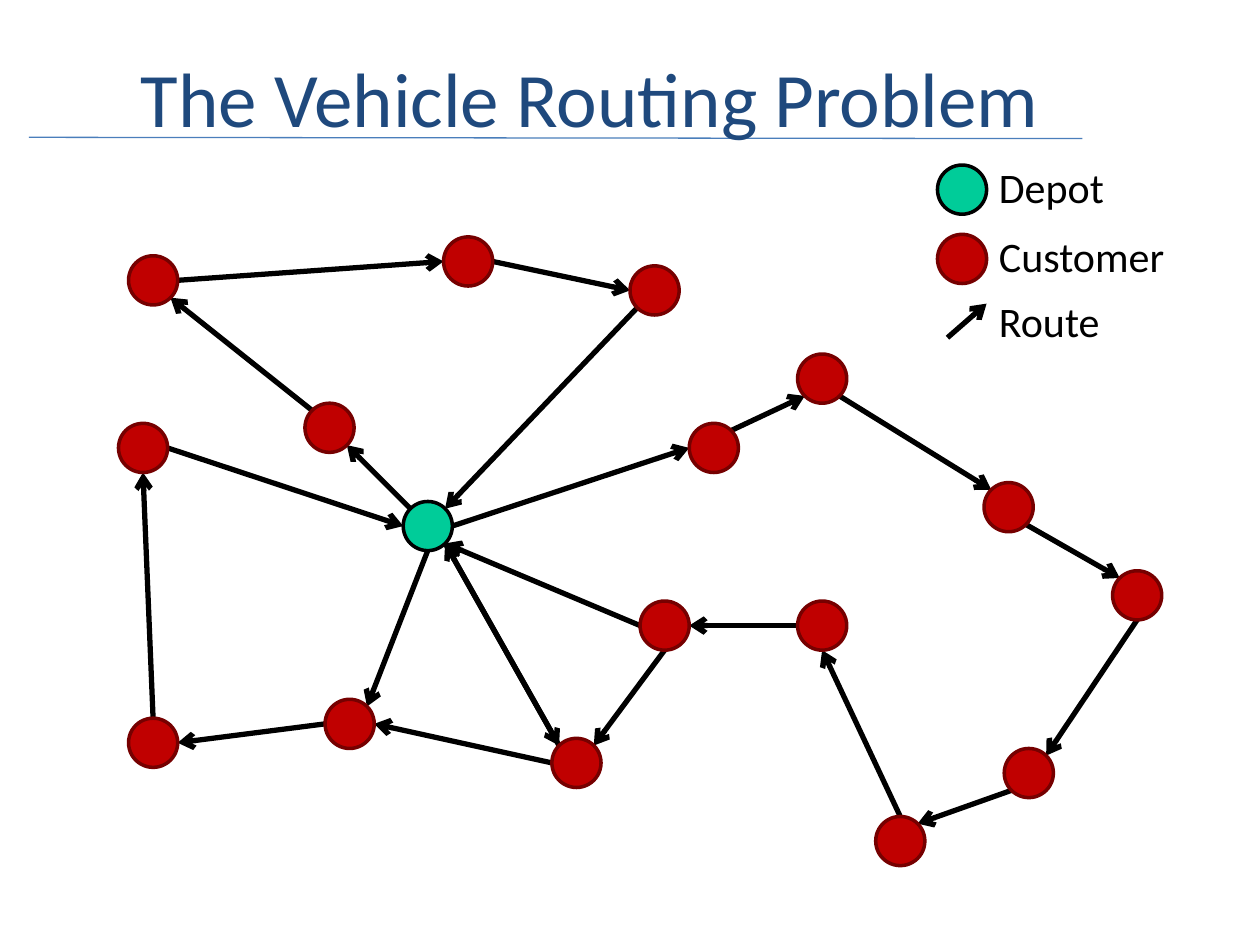
from dataclasses import dataclass
from math import sqrt

from lxml.etree import SubElement
from pptx import Presentation
from pptx.dml.color import RGBColor
from pptx.enum.shapes import MSO_CONNECTOR, MSO_SHAPE
from pptx.enum.text import MSO_ANCHOR, MSO_AUTO_SIZE
from pptx.oxml.ns import qn
from pptx.util import Inches, Pt

COLOURS = {
    "depot": "00CC99",
    "depot_edge": "000000",
    "customer": "C00000",
    "customer_edge": "760000",
    "route": "000000",
    "title": "1F497D",
    "rule": "4A7EBB",
    "label": "000000",
}
DIAMETER = 0.39
DIAGONAL = 1 / sqrt(2)
SIDES = {
    "N": (0, -1), "NE": (DIAGONAL, -DIAGONAL), "E": (1, 0), "SE": (DIAGONAL, DIAGONAL),
    "S": (0, 1), "SW": (-DIAGONAL, DIAGONAL), "W": (-1, 0), "NW": (-DIAGONAL, -DIAGONAL),
}


@dataclass(frozen=True)
class Stop:
    left: float
    top: float
    kind: str = "customer"

    def edge(self, side: str) -> tuple[float, float]:
        across, down = SIDES[side]
        radius = DIAMETER / 2
        return self.left + radius * (1 + across), self.top + radius * (1 + down)


@dataclass(frozen=True)
class Route:
    start: str
    start_side: str
    end: str
    end_side: str


@dataclass(frozen=True)
class Label:
    text: str
    left: float
    top: float
    width: float
    height: float
    size: int = 24
    colour: str = "label"


STOPS = {
    "depot": Stop(3.2, 3.98, "depot"),
    "inner north": Stop(2.42, 3.2),
    "north west": Stop(1.02, 2.03),
    "north": Stop(3.52, 1.88),
    "north east": Stop(5, 2.11),
    "east 1": Stop(5.47, 3.36),
    "east 2": Stop(6.33, 2.81),
    "east 3": Stop(7.81, 3.83),
    "east 4": Stop(8.83, 4.53),
    "east 5": Stop(7.97, 5.94),
    "east 6": Stop(6.95, 6.48),
    "east 7": Stop(6.33, 4.77),
    "east 8": Stop(5.08, 4.77),
    "south": Stop(4.38, 5.86),
    "south west": Stop(2.58, 5.55),
    "far south west": Stop(1.02, 5.7),
    "west": Stop(0.94, 3.36),
}
ROUTES = [
    Route("depot", "NW", "inner north", "SE"),
    Route("inner north", "NW", "north west", "SE"),
    Route("north west", "E", "north", "W"),
    Route("north", "E", "north east", "W"),
    Route("north east", "SW", "depot", "NE"),
    Route("depot", "E", "east 1", "W"),
    Route("east 1", "NE", "east 2", "SW"),
    Route("east 2", "SE", "east 3", "NW"),
    Route("east 3", "SE", "east 4", "NW"),
    Route("east 4", "S", "east 5", "NE"),
    Route("east 5", "SW", "east 6", "NE"),
    Route("east 6", "N", "east 7", "S"),
    Route("east 7", "W", "east 8", "E"),
    Route("east 8", "W", "depot", "SE"),
    Route("east 8", "S", "south", "NE"),
    Route("depot", "SE", "south", "NW"),
    Route("south", "NW", "depot", "SE"),
    Route("south", "W", "south west", "E"),
    Route("depot", "S", "south west", "NE"),
    Route("south west", "W", "far south west", "E"),
    Route("far south west", "N", "west", "S"),
    Route("west", "E", "depot", "W"),
]
TITLE = Label("The Vehicle Routing Problem", 1.02, 0.29, 8.98, 0.95, 44, "title")
LEGEND_LABELS = [
    Label(text, 7.83, top, 1.97, 0.5)
    for text, top in (("Depot", 1.23), ("Customer", 1.78), ("Route", 2.3))
]
LEGEND_STOPS = [Stop(7.44, 1.31, "depot"), Stop(7.44, 1.86)]


def colour(name: str) -> RGBColor:
    return RGBColor.from_string(COLOURS[name])


def apply_format(target, values: dict) -> None:
    for name, value in values.items():
        setattr(target, name, value)


def draw_line(page, start: tuple, end: tuple, line_colour: str, width: float, arrow: bool = True) -> None:
    connector = page.shapes.add_connector(
        MSO_CONNECTOR.STRAIGHT, *(Inches(value) for value in (*start, *end))
    )
    connector.line.color.rgb = colour(line_colour)
    connector.line.width = Pt(width)
    if arrow:
        SubElement(connector.line._get_or_add_ln(), qn("a:tailEnd"), type="arrow")
    SubElement(connector._element.spPr, qn("a:effectLst"))


def draw_stop(page, stop: Stop) -> None:
    circle = page.shapes.add_shape(
        MSO_SHAPE.OVAL, Inches(stop.left), Inches(stop.top), Inches(DIAMETER), Inches(DIAMETER)
    )
    circle.shadow.inherit = False
    circle.fill.solid()
    circle.fill.fore_color.rgb = colour(stop.kind)
    circle.line.color.rgb = colour(f"{stop.kind}_edge")
    circle.line.width = Pt(2)


def draw_label(page, label: Label, frame_format: dict) -> None:
    box = page.shapes.add_textbox(
        Inches(label.left), Inches(label.top), Inches(label.width), Inches(label.height)
    )
    apply_format(box.text_frame, {"word_wrap": True, **frame_format})
    span = box.text_frame.paragraphs[0].add_run()
    span.text = label.text
    apply_format(span.font, {"name": "Calibri", "size": Pt(label.size)})
    span.font.color.rgb = colour(label.colour)


def main() -> None:
    deck = Presentation()
    apply_format(deck, {"slide_width": Inches(10), "slide_height": Inches(7.5)})
    page = deck.slides.add_slide(deck.slide_layouts[6])

    draw_line(page, (0.23, 1.09), (8.59, 1.1), "rule", 0.75, arrow=False)
    for route in ROUTES:
        start = STOPS[route.start].edge(route.start_side)
        end = STOPS[route.end].edge(route.end_side)
        draw_line(page, start, end, "route", 3)
    for stop in [*STOPS.values(), *LEGEND_STOPS]:
        draw_stop(page, stop)
    draw_line(page, (7.52, 2.68), (7.83, 2.41), "route", 3)
    draw_label(page, TITLE, {"vertical_anchor": MSO_ANCHOR.MIDDLE})
    for label in LEGEND_LABELS:
        draw_label(page, label, {"auto_size": MSO_AUTO_SIZE.SHAPE_TO_FIT_TEXT})

    deck.save("out.pptx")


if __name__ == "__main__":
    main()
